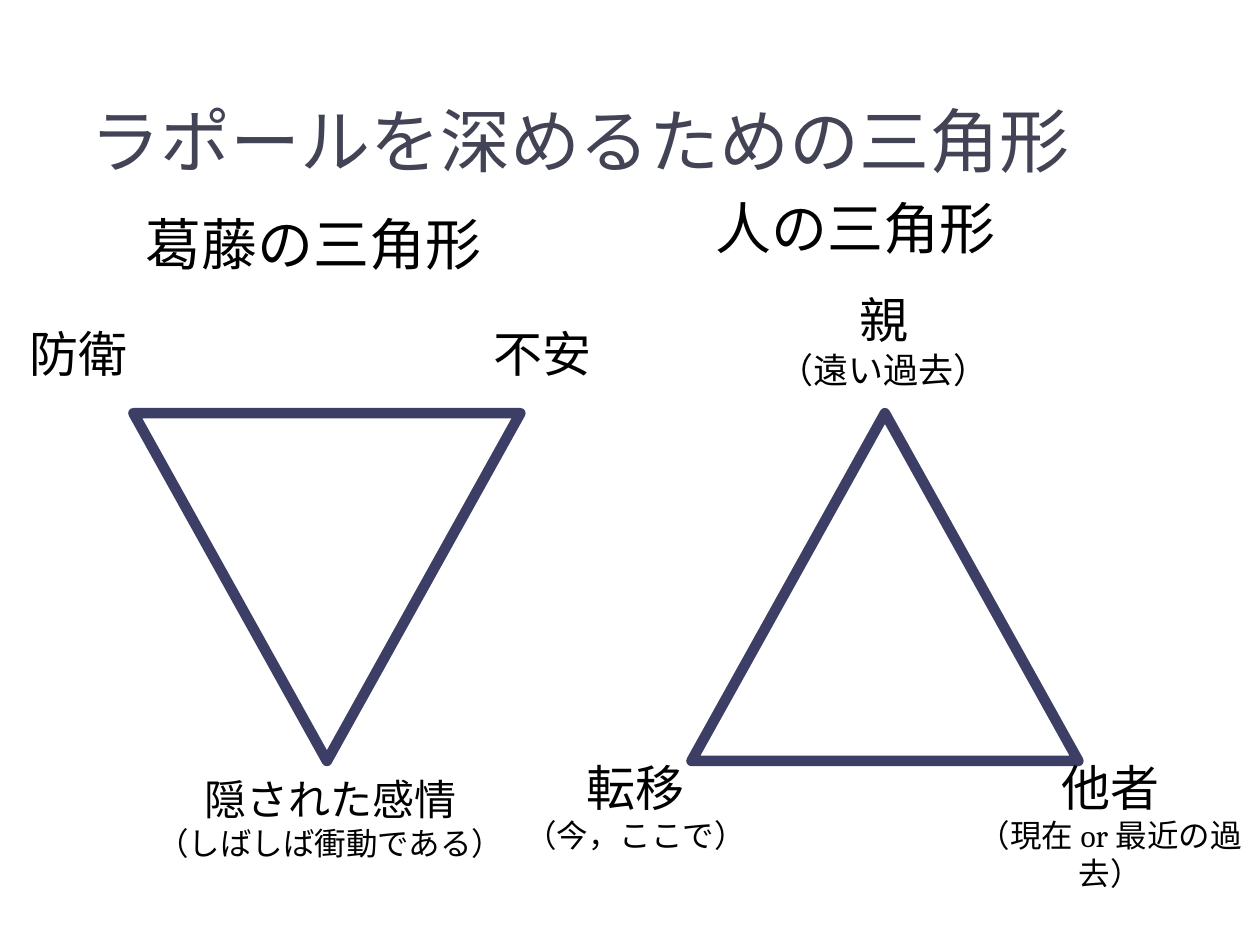
from pptx import Presentation
from pptx.dml.color import RGBColor
from pptx.enum.shapes import MSO_SHAPE
from pptx.enum.text import MSO_ANCHOR, MSO_AUTO_SIZE, PP_ALIGN
from pptx.util import Cm, Pt

LEFT, MID = PP_ALIGN.LEFT, PP_ALIGN.CENTER
TRI = MSO_SHAPE.ISOSCELES_TRIANGLE
GROW, FIXED = MSO_AUTO_SIZE.SHAPE_TO_FIT_TEXT, MSO_AUTO_SIZE.NONE
MIDDLE = MSO_ANCHOR.MIDDLE

TITLE = dict(name="Roboto", size=Pt(40))
BODY = dict(name="Cambria")
SIZE = (7.8, 7.01)

# Each label: offset from the triangle's corner, size, lines of (text, points, alignment)
CONFLICT = [
    ((0, -4.24), (7.34, 1.63), [("葛藤の三角形", 32, LEFT)]),
    ((-2.34, -1.93), (2.51, 1.45), [("防衛", 28, LEFT)]),
    ((7.01, -1.93), (2.51, 1.45), [("不安", 28, LEFT)]),
    ((0.18, 7.14), (7.57, 2.06),
     [("隠された感情", 24, MID), ("（しばしば衝動である）", 18, MID)]),
]
PERSON = [
    ((0.23, -4.55), (6.22, 1.63), [("人の三角形", 32, LEFT)]),
    ((1.5, -2.62), (4.78, 2.31), [("親", 28, MID), ("（遠い過去）", 20, LEFT)]),
    ((-3.63, 6.81), (5, 2.24), [("転移", 28, MID), ("（今，ここで）", 18, MID)]),
    ((5, 6.81), (6.88, 2.24), [("他者", 28, MID), ("（現在or最近の過去）", 18, MID)]),
]


def color(code):
    return RGBColor.from_string(code)


def style(font, code, **form):
    for key, val in form.items():
        setattr(font, key, val)
    font.color.rgb = color(code)


def add_title(slide, box, text):
    title = slide.shapes.title
    for key, val in zip(("left", "top", "width", "height"), box):
        setattr(title, key, Cm(val))
    frame = title.text_frame
    frame.text = text
    frame.auto_size = FIXED
    frame.vertical_anchor = MIDDLE
    para = frame.paragraphs[0]
    para.alignment = LEFT
    style(para.font, "424456", **TITLE)


def add_label(slide, box, lines):
    frame = slide.shapes.add_textbox(*map(Cm, box)).text_frame
    frame.word_wrap = False
    frame.auto_size = GROW
    for i, (text, size, align) in enumerate(lines):
        para = frame.add_paragraph() if i else frame.paragraphs[0]
        para.text = text
        para.alignment = align
        style(para.font, "000000", size=Pt(size), **BODY)


def add_model(slide, box, turn, labels):
    """Draw a triangle in the box, with its heading and corner labels."""
    x, y, wide, high = box
    shape = slide.shapes.add_shape(TRI, *map(Cm, box))
    shape.rotation = turn
    shape.shadow.inherit = False
    shape.fill.background()
    shape.line.color.rgb = color("3D3E66")
    shape.line.width = Pt(6)
    for (dx, dy), size, lines in labels:
        add_label(slide, (x + dx, y + dy, *size), lines)


def main():
    deck = Presentation()
    deck.slide_width, deck.slide_height = Cm(25.4), Cm(19.05)
    slide = deck.slides.add_slide(deck.slide_layouts[5])
    add_title(slide, (1.57, 1.32, 22.86, 2.97), "ラポールを深めるための三角形")
    add_model(slide, (2.69, 8.33, *SIZE), 180, CONFLICT)
    add_model(slide, (13.94, 8.33, *SIZE), 0, PERSON)
    deck.save("out.pptx")


if __name__ == "__main__":
    main()
